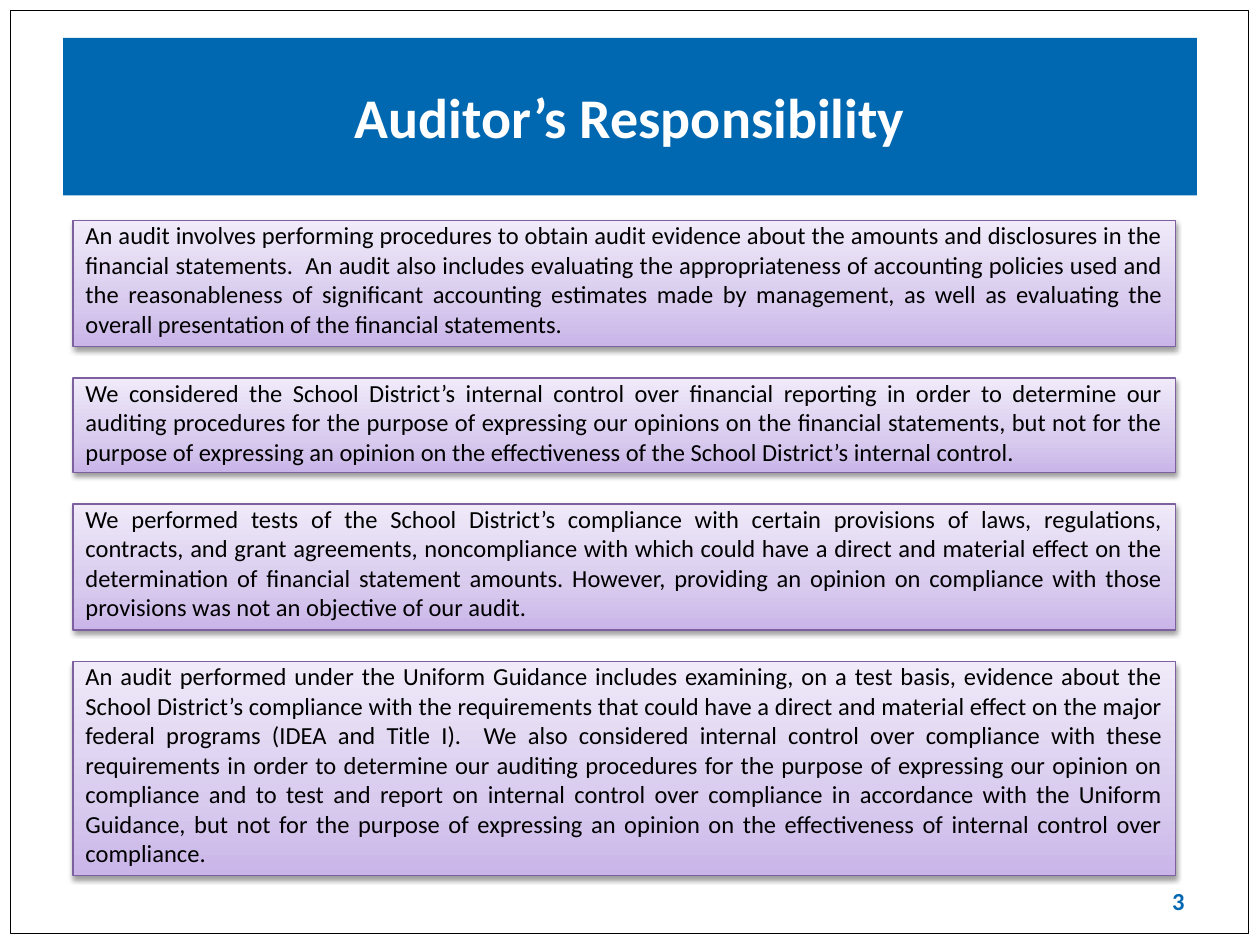
from lxml import etree
from pptx import Presentation
from pptx.dml.color import RGBColor
from pptx.enum.shapes import MSO_SHAPE
from pptx.enum.text import MSO_ANCHOR, PP_ALIGN
from pptx.oxml.ns import qn
from pptx.util import Inches, Pt

RECTANGLE = MSO_SHAPE.RECTANGLE
TOP, MIDDLE = MSO_ANCHOR.TOP, MSO_ANCHOR.MIDDLE
CENTER, RIGHT, JUSTIFY = PP_ALIGN.CENTER, PP_ALIGN.RIGHT, PP_ALIGN.JUSTIFY

TITLE = "Auditor’s Responsibility"
PAGE_NUMBER = "3"
STATEMENTS = [
    (1, "An audit involves performing procedures to obtain audit evidence about the amounts and "
        "disclosures in the financial statements.  An audit also includes evaluating the "
        "appropriateness of accounting policies used and the reasonableness of significant "
        "accounting estimates made by management, as well as evaluating the overall presentation "
        "of the financial statements."),
    (0.75, "We considered the School District’s internal control over financial reporting in order "
           "to determine our auditing procedures for the purpose of expressing our opinions on the "
           "financial statements, but not for the purpose of expressing an opinion on the "
           "effectiveness of the School District’s internal control."),
    (1, "We performed tests of the School District’s compliance with certain provisions of laws, "
        "regulations, contracts, and grant agreements, noncompliance with which could have a "
        "direct and material effect on the determination of financial statement amounts. However, "
        "providing an opinion on compliance with those provisions was not an objective of our "
        "audit."),
    (1.7, "An audit performed under the Uniform Guidance includes examining, on a test basis, "
          "evidence about the School District’s compliance with the requirements that could have a "
          "direct and material effect on the major federal programs (IDEA and Title I).  We also "
          "considered internal control over compliance with these requirements in order to "
          "determine our auditing procedures for the purpose of expressing our opinion on "
          "compliance and to test and report on internal control over compliance in accordance "
          "with the Uniform Guidance, but not for the purpose of expressing an opinion on the "
          "effectiveness of internal control over compliance."),
]

THEME = {
    "font": "Calibri",
    "blue": "0067B1",
    "white": "FFFFFF",
    "black": "000000",
    "border": "7D60A0",
    "gradient": [(0, "C9B5E8"), (35, "D8CBEE"), (100, "F0EAF9")],
    "title_size": 32,
    "body_size": 14,
}
BOX_LEFT, BOX_TOP, BOX_WIDTH, BOX_GAP = 0.58, 1.75, 8.75, 0.25


def color(name):
    return RGBColor.from_string(THEME[name])


def set_attributes(target, values):
    for name, value in values.items():
        setattr(target, name, value)


def place(shape, left, top, width, height):
    set_attributes(shape, {"left": Inches(left), "top": Inches(top),
                           "width": Inches(width), "height": Inches(height)})


def write_text(shape, text, size, color_name, bold, alignment, anchor,
               vertical_margin=0.05, space_before=0):
    frame = shape.text_frame
    set_attributes(frame, {
        "word_wrap": True, "vertical_anchor": anchor,
        "margin_left": Inches(0.1), "margin_right": Inches(0.1),
        "margin_top": Inches(vertical_margin), "margin_bottom": Inches(vertical_margin)})
    paragraph = frame.paragraphs[0]
    set_attributes(paragraph, {"alignment": alignment, "space_before": Pt(space_before)})
    run = paragraph.add_run()
    run.text = text
    set_attributes(run.font, {"name": THEME["font"], "size": Pt(THEME[size]), "bold": bold})
    run.font.color.rgb = color(color_name)


def add_rectangle(slide, bounds, line_color, line_width):
    shape = slide.shapes.add_shape(RECTANGLE, *map(Inches, bounds))
    shape.shadow.inherit = False
    shape.line.color.rgb = color(line_color)
    shape.line.width = Pt(line_width)
    return shape


def add_color(parent, value):
    return etree.SubElement(parent, qn("a:srgbClr"), val=value)


def apply_gradient(shape):
    shape.fill.gradient()
    shape.fill.gradient_angle = 90
    stops = shape.element.spPr.find(".//" + qn("a:gsLst"))
    for stop in list(stops):
        stops.remove(stop)
    for position, value in THEME["gradient"]:
        add_color(etree.SubElement(stops, qn("a:gs"), pos=str(position * 1000)), value)


def apply_shadow(shape):
    effects = shape.element.spPr.find(qn("a:effectLst"))
    shadow = etree.SubElement(effects, qn("a:outerShdw"), blurRad=str(Pt(3.1)),
                              dist=str(Pt(1.6)), dir=str(90 * 60000), rotWithShape="0")
    etree.SubElement(add_color(shadow, THEME["black"]), qn("a:alpha"), val="38000")


def add_statement(slide, top, height, text):
    box = add_rectangle(slide, (BOX_LEFT, top, BOX_WIDTH, height), "border", 0.75)
    apply_gradient(box)
    apply_shadow(box)
    write_text(box, text, "body_size", "black", False, JUSTIFY, TOP,
               vertical_margin=0, space_before=2.8)


def main():
    presentation = Presentation()
    set_attributes(presentation, {"slide_width": Inches(10), "slide_height": Inches(7.5)})
    slide = presentation.slides.add_slide(presentation.slide_layouts[5])

    border = add_rectangle(slide, (0.08, 0.08, 9.83, 7.33), "black", 0.5)
    border.fill.background()

    title = slide.shapes.title
    place(title, 0.5, 0.3, 9, 1.25)
    title.fill.solid()
    title.fill.fore_color.rgb = color("blue")
    write_text(title, TITLE, "title_size", "white", True, CENTER, MIDDLE)

    top = BOX_TOP
    for height, text in STATEMENTS:
        add_statement(slide, top, height, text)
        top += height + BOX_GAP

    number = slide.shapes.add_textbox(*map(Inches, (7.17, 6.95, 2.33, 0.4)))
    write_text(number, PAGE_NUMBER, "body_size", "blue", True, RIGHT, MIDDLE)

    presentation.save("out.pptx")


if __name__ == "__main__":
    main()
